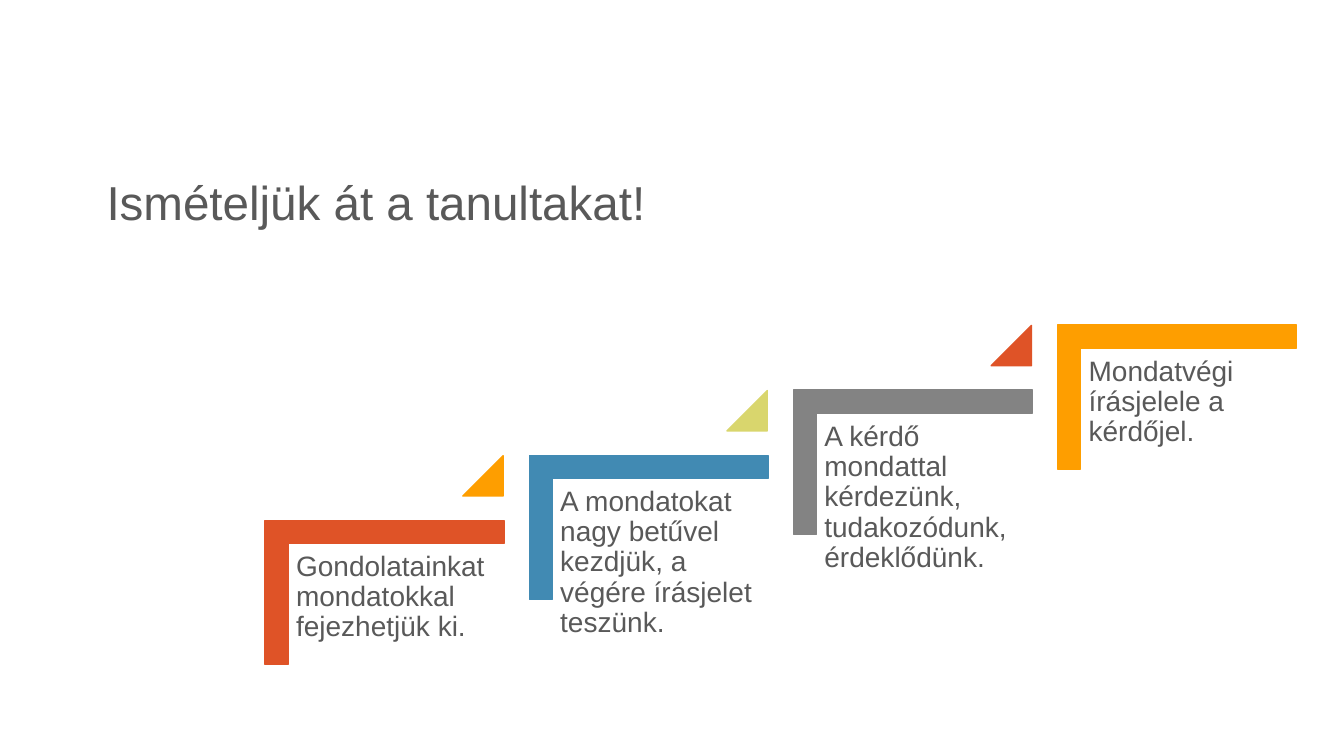
from dataclasses import dataclass

from pptx import Presentation
from pptx.dml.color import RGBColor
from pptx.enum.shapes import MSO_SHAPE
from pptx.enum.text import MSO_ANCHOR
from pptx.util import Emu, Pt

EMU_PER_PX = 3810
STEP_X = 629
STEP_Y = -155
INSET = 19
TITLE_INSET = 24

TEXT_GRAY = RGBColor(0x59, 0x59, 0x59)
RED = RGBColor(0xDF, 0x53, 0x27)
BLUE = RGBColor(0x41, 0x8A, 0xB3)
GRAY = RGBColor(0x83, 0x83, 0x83)
ORANGE = RGBColor(0xFE, 0x9E, 0x00)
LIME = RGBColor(0xD9, 0xD6, 0x6D)


@dataclass(frozen=True)
class Box:
    left: int
    top: int
    width: int
    height: int

    def moved(self, steps: int) -> "Box":
        return Box(self.left + steps * STEP_X, self.top + steps * STEP_Y,
                   self.width, self.height)

    def emu(self) -> list[Emu]:
        return [px(value) for value in (self.left, self.top, self.width, self.height)]


@dataclass(frozen=True)
class Step:
    text: str
    corner_color: RGBColor
    triangle_color: RGBColor | None = None


TITLE_BOX = Box(230, 254, 2460, 314)
CORNER_BOX = Box(744, 1126, 343, 569)
TEXT_BOX = Box(686, 1296, 514, 451)
TRIANGLE_BOX = Box(1102, 1085, 96, 96)

STEPS = [
    Step("Gondolatainkat mondatokkal fejezhetjük ki.", RED, ORANGE),
    Step("A mondatokat nagy betűvel kezdjük, a végére írásjelet teszünk.", BLUE, LIME),
    Step("A kérdő mondattal kérdezünk, tudakozódunk, érdeklődünk.", GRAY, RED),
    Step("Mondatvégi írásjelele a kérdőjel.", ORANGE),
]


def px(value: int) -> Emu:
    return Emu(value * EMU_PER_PX)


def add_text(slide, box: Box, text: str, size: int, inset: int, anchor: MSO_ANCHOR) -> None:
    frame = slide.shapes.add_textbox(*box.emu()).text_frame
    frame.word_wrap = True
    frame.vertical_anchor = anchor
    frame.margin_left = frame.margin_right = px(inset)
    frame.margin_top = frame.margin_bottom = px(INSET)
    paragraph = frame.paragraphs[0]
    paragraph.text = text
    paragraph.line_spacing = 0.9
    paragraph.font.name = "Arial"
    paragraph.font.size = Pt(size)
    paragraph.font.color.rgb = TEXT_GRAY


def add_solid(slide, kind: MSO_SHAPE, box: Box, color: RGBColor,
              adjustments: list[float], rotation: int = 0) -> None:
    shape = slide.shapes.add_shape(kind, *box.emu())
    shape.shadow.inherit = False
    shape.rotation = rotation
    shape.fill.solid()
    shape.fill.fore_color.rgb = color
    shape.line.color.rgb = color
    shape.line.width = Pt(1)
    for index, value in enumerate(adjustments):
        shape.adjustments[index] = value


def add_step(slide, index: int, step: Step) -> None:
    add_solid(slide, MSO_SHAPE.CORNER, CORNER_BOX.moved(index), step.corner_color,
              [0.16, 0.16], 90)
    add_text(slide, TEXT_BOX.moved(index), step.text, 20, INSET, MSO_ANCHOR.TOP)
    if step.triangle_color is not None:
        add_solid(slide, MSO_SHAPE.ISOSCELES_TRIANGLE, TRIANGLE_BOX.moved(index),
                  step.triangle_color, [1])


def main() -> None:
    presentation = Presentation()
    presentation.slide_width = px(3200)
    presentation.slide_height = px(1800)
    slide = presentation.slides.add_slide(presentation.slide_layouts[6])
    add_text(slide, TITLE_BOX, "Ismételjük át a tanultakat!", 34, TITLE_INSET,
             MSO_ANCHOR.BOTTOM)
    for index, step in enumerate(STEPS):
        add_step(slide, index, step)
    presentation.save("out.pptx")


if __name__ == "__main__":
    main()
